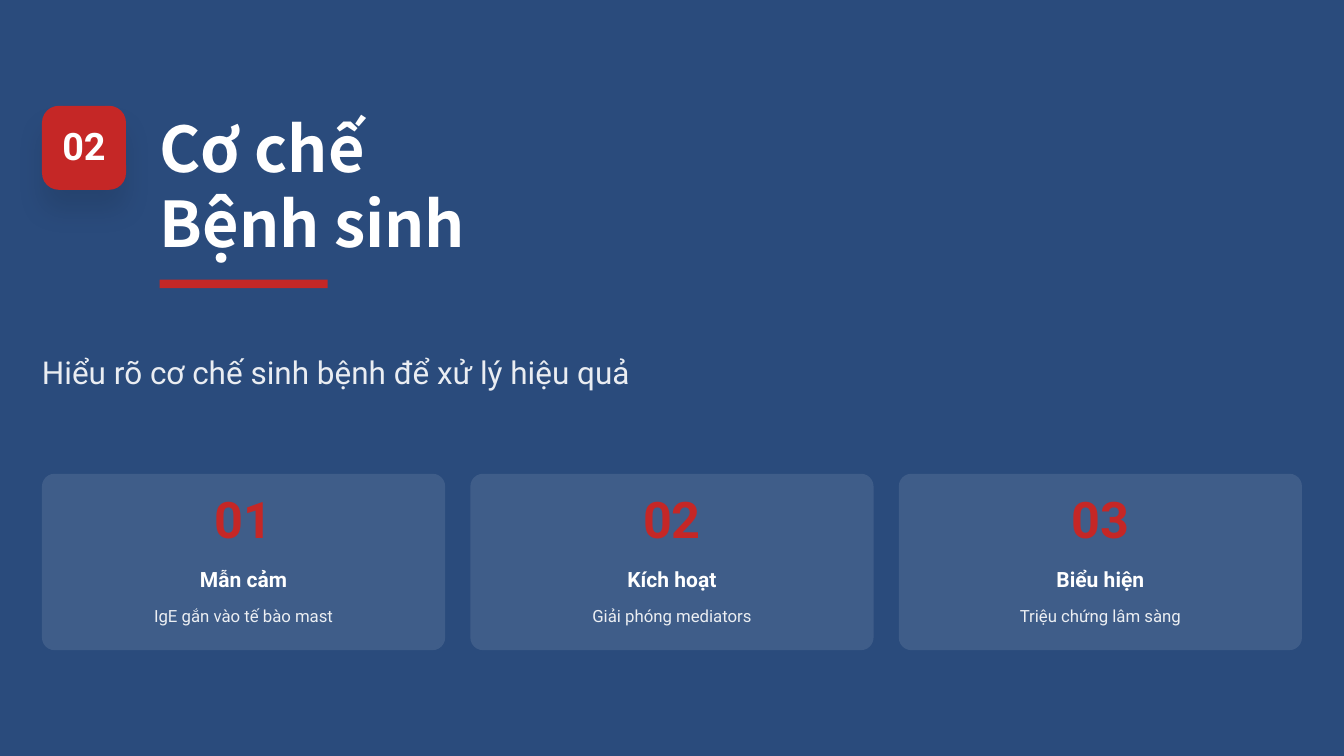
"""Build the section slide on disease mechanism."""
from dataclasses import dataclass

from lxml import etree
from pptx import Presentation
from pptx import util as u
from pptx.dml.color import RGBColor
from pptx.enum import shapes, text
from pptx.oxml.ns import qn

WIDTH, HEIGHT = 17.78, 10
COLUMNS, ROWS = 32, 18


@dataclass(frozen=True)
class Theme:
    """Colours, fonts and type sizes of the slide."""
    ground: str = "2A4B7C"
    accent: str = "C52726"
    light: str = "FFFFFF"
    heading: str = "Noto Sans CJK SC"
    body: str = "Roboto"
    title: int = 60
    number: int = 48
    badge: int = 36
    lead: int = 30
    label: int = 20
    note: int = 16


THEME = Theme()
STEPS = [
    ("01", "Mẫn cảm", "IgE gắn vào tế bào mast"),
    ("02", "Kích hoạt", "Giải phóng mediators"),
    ("03", "Biểu hiện", "Triệu chứng lâm sàng"),
]


def place(box):
    """Turn a box in columns and rows into slide lengths."""
    left, top, width, height = box
    across, down = WIDTH / COLUMNS, HEIGHT / ROWS
    return (u.Inches(left * across), u.Inches(top * down),
            u.Inches(width * across), u.Inches(height * down))


def set_alpha(element, percent):
    """Make every colour inside an element partly transparent."""
    for colour in element.iter(qn("a:srgbClr")):
        etree.SubElement(colour, qn("a:alpha"), val=str(percent * 1000))


def write(shape, *lines, size, font=THEME.body, colour=THEME.light, bold=False,
          align=text.PP_ALIGN.LEFT, spacing=None, alpha=100):
    """Fill a shape with formatted paragraphs, centred in height."""
    frame = shape.text_frame
    frame.word_wrap = True
    frame.vertical_anchor = text.MSO_ANCHOR.MIDDLE
    frame.margin_left = frame.margin_right = frame.margin_top = frame.margin_bottom = 0
    for index, line in enumerate(lines):
        para = frame.add_paragraph() if index else frame.paragraphs[0]
        para.alignment = align
        para.space_before = u.Pt(0)
        if spacing:
            para.line_spacing = spacing
        span = para.add_run()
        span.text = line
        span.font.name = font
        span.font.size = u.Pt(size)
        span.font.bold = bold
        span.font.color.rgb = RGBColor.from_string(colour)
        if alpha < 100:
            set_alpha(para.runs[0].font.fill and span._r, alpha)


def add_text(page, box, line, **style):
    """Add a text box with one formatted line."""
    write(page.shapes.add_textbox(*place(box)), line, **style)


def add_block(page, box, colour, radius=0, alpha=100):
    """Add a plain block, rounded when a radius in columns is given."""
    kind = shapes.MSO_SHAPE.ROUNDED_RECTANGLE if radius else shapes.MSO_SHAPE.RECTANGLE
    block = page.shapes.add_shape(kind, *place(box))
    if radius:
        block.adjustments[0] = radius / min(box[2:])
    block.fill.solid()
    block.fill.fore_color.rgb = RGBColor.from_string(colour)
    block.line.fill.background()
    block.shadow.inherit = False
    if alpha < 100:
        set_alpha(block._element.spPr, alpha)
    return block


def drop_shadow(shape, blur, distance, percent):
    """Give a shape a soft black shadow below it."""
    effects = shape._element.spPr.find(qn("a:effectLst"))
    shadow = etree.SubElement(effects, qn("a:outerShdw"), blurRad=str(u.Pt(blur)),
                              dist=str(u.Pt(distance)), dir="5400000",
                              algn="ctr", rotWithShape="0")
    etree.SubElement(shadow, qn("a:srgbClr"), val="000000")
    set_alpha(shadow, percent)


def add_header(page, box):
    """Place the badge, the title and its underline."""
    left, top, width, _ = box
    badge = add_block(page, (left, top, 2, 2), THEME.accent, radius=0.4)
    drop_shadow(badge, blur=25, distance=20, percent=10)
    write(badge, "02", size=THEME.badge, bold=True,
          align=text.PP_ALIGN.CENTER, spacing=0.9)
    title = page.shapes.title
    title.left, title.top, title.width, title.height = place(
        (left + 2.8, top, width - 2.8, 3.75))
    write(title, "Cơ chế", "Bệnh sinh", size=THEME.title,
          font=THEME.heading, bold=True)
    add_block(page, (left + 2.8, top + 4.14, 4, 0.2), THEME.accent)


def add_card(page, box, step):
    """Place one step card with its number, label and note."""
    left, top, width, _ = box
    number, label, note = step
    add_block(page, box, THEME.light, radius=0.3, alpha=10)
    rows = [
        (0.6, 1.2, number, dict(size=THEME.number, colour=THEME.accent,
                                bold=True, spacing=0.8)),
        (2.1, 0.7, label, dict(size=THEME.label, bold=True, spacing=1.2)),
        (3, 0.6, note, dict(size=THEME.note, spacing=1.3, alpha=90)),
    ]
    for offset, height, line, style in rows:
        add_text(page, (left + 0.3, top + offset, width - 0.6, height), line,
                 align=text.PP_ALIGN.CENTER, **style)


def add_steps(page, box, steps, gap=0.6):
    """Place the step cards side by side with equal gaps."""
    left, top, width, height = box
    card = (width - gap * (len(steps) - 1)) / len(steps)
    for index, step in enumerate(steps):
        add_card(page, (left + index * (card + gap), top, card, height), step)


def main():
    """Build the deck and save it."""
    deck = Presentation()
    deck.slide_width, deck.slide_height = u.Inches(WIDTH), u.Inches(HEIGHT)
    page = deck.slides.add_slide(deck.slide_layouts[5])
    page.background.fill.solid()
    page.background.fill.fore_color.rgb = RGBColor.from_string(THEME.ground)
    add_header(page, (1, 2.52, 10.8, 4.34))
    add_text(page, (1, 8.06, 22.77, 1.22),
             "Hiểu rõ cơ chế sinh bệnh để xử lý hiệu quả",
             size=THEME.lead, spacing=1.4, alpha=90)
    add_steps(page, (1, 11.28, 30, 4.2), STEPS)
    deck.save("out.pptx")


if __name__ == "__main__":
    main()
